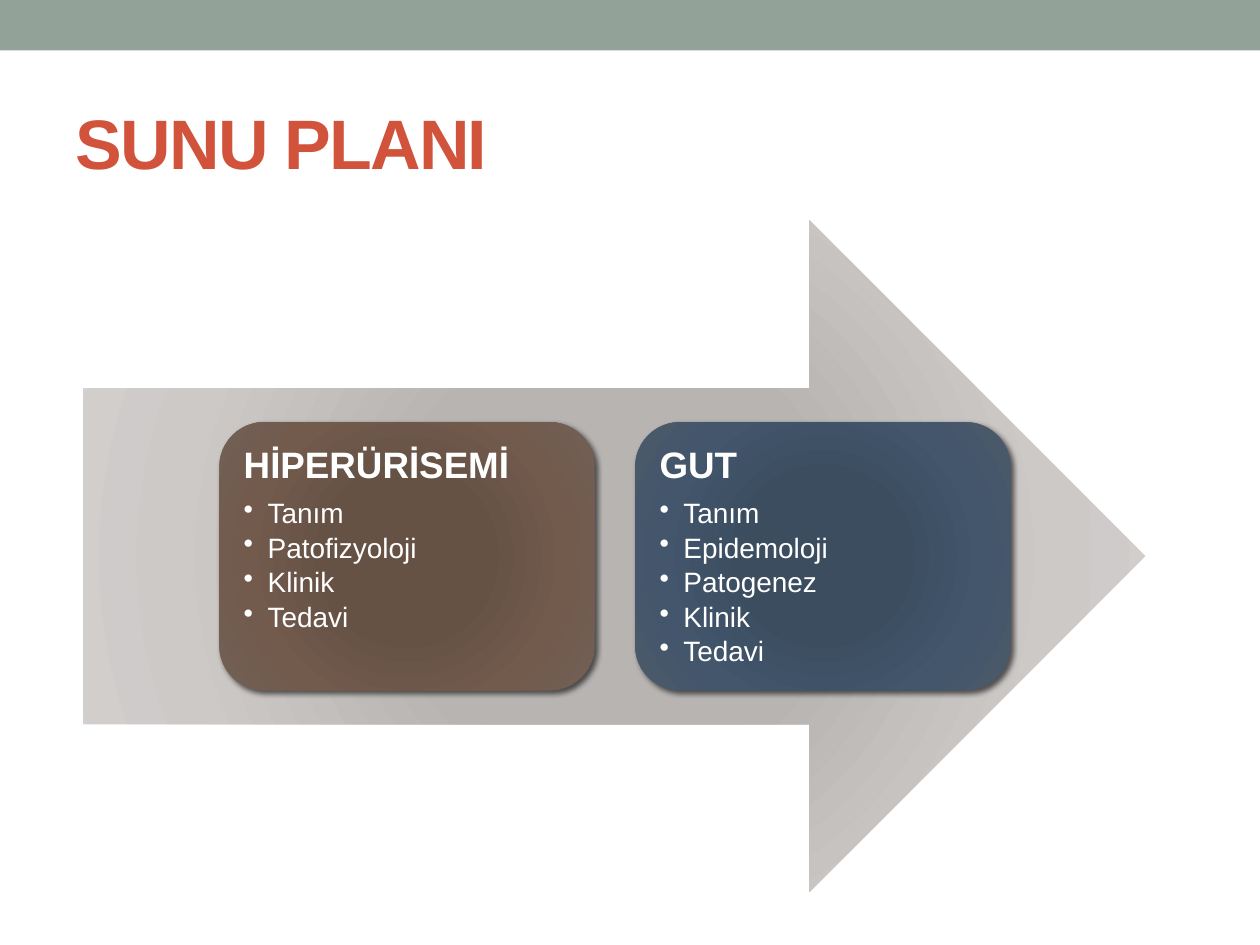
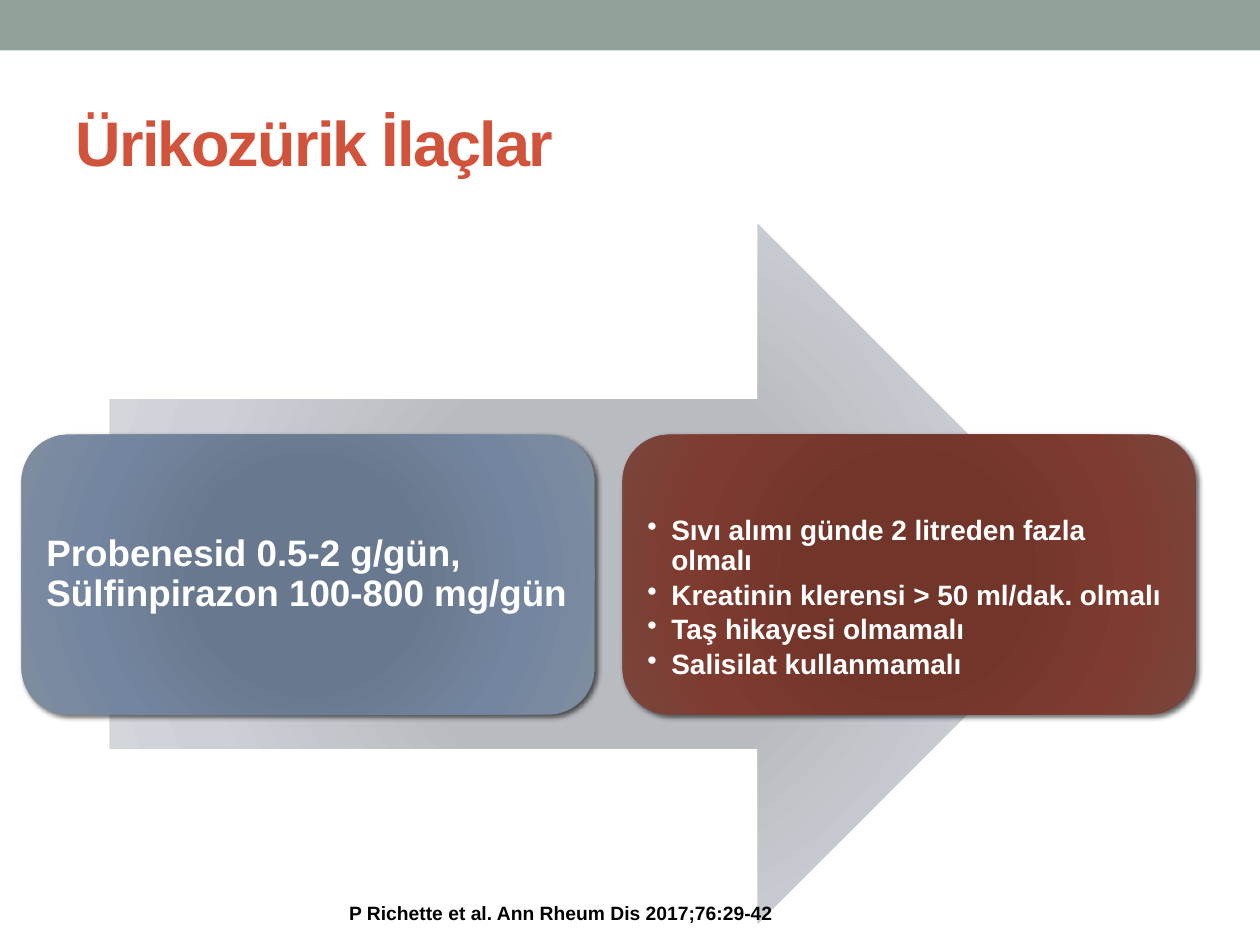
from dataclasses import dataclass

from pptx import Presentation
from pptx.dml.color import RGBColor
from pptx.enum.shapes import MSO_SHAPE as Preset
from pptx.enum.text import MSO_ANCHOR as Anchor, PP_ALIGN as Align
from pptx.oxml import parse_xml
from pptx.oxml.ns import nsdecls, qn
from pptx.shapes.autoshape import Shape
from pptx.slide import Slide
from pptx.util import Inches, Pt

FONT = "Arial"
BAND, TITLE, WHITE, BLACK = "93A299", "D2533C", "FFFFFF", "000000"
GRADIENT_STOPS = (0, 34, 70, 100)
TEXT_INSET = 0.09
BULLET_INDENT = Inches(0.19)


@dataclass(frozen=True)
class Frame:
    left: float
    top: float
    width: float
    height: float

    def lengths(self) -> tuple[int, ...]:
        return tuple(Inches(v) for v in (self.left, self.top, self.width, self.height))


@dataclass(frozen=True)
class Card:
    shades: tuple[str, ...]
    heading: str = ""
    bullets: tuple[str, ...] = ()
    bold_bullets: bool = False
    anchor: Anchor = Anchor.TOP
    top_inset: float = TEXT_INSET


@dataclass(frozen=True)
class ArrowPage:
    title: str
    title_size: int
    arrow: Frame
    arrow_shades: tuple[str, ...]
    first_card: Frame
    card_gap: float
    cards: tuple[Card, ...]
    citation: str = ""


PAGES = (
    ArrowPage(
        "SUNU PLANI", 40,
        Frame(0.66, 1.75, 8.43, 5.33), ("B8B4B2", "B7B4B2", "CDC9C7", "D5D2D1"),
        Frame(1.74, 3.35, 2.98, 2.13), 0.32,
        (
            Card(("685044", "665145", "725A4D", "726056"), "HİPERÜRİSEMİ",
                 ("Tanım", "Patofizyoloji", "Klinik", "Tedavi")),
            Card(("3B4D61", "3C4D60", "43566B", "4C5A6A"), "GUT",
                 ("Tanım", "Epidemoloji", "Patogenez", "Klinik", "Tedavi")),
        ),
    ),
    ArrowPage(
        "Ürikozürik İlaçlar", 36,
        Frame(0.87, 1.78, 7.92, 5.55), ("B7BBC1", "B8BBC0", "CDD1D7", "D8DBDF"),
        Frame(0.17, 3.45, 4.55, 2.22), 0.22,
        (
            Card(("677790", "68788E", "74869F", "808DA0"),
                 "Probenesid 0.5-2 g/gün, Sülfinpirazon 100-800 mg/gün",
                 anchor=Anchor.MIDDLE),
            Card(("743327", "72352A", "7F3B2F", "79463D"),
                 bullets=("Sıvı alımı günde 2 litreden fazla olmalı",
                          "Kreatinin klerensi > 50 ml/dak. olmalı",
                          "Taş hikayesi olmamalı",
                          "Salisilat kullanmamalı"),
                 bold_bullets=True, top_inset=0.54),
        ),
        "P Richette et al. Ann Rheum Dis 2017;76:29-42",
    ),
)


def rgb(color: str) -> RGBColor:
    return RGBColor.from_string(color)


def style(para, size: float, color: str, bold: bool = True) -> None:
    font = para.font
    font.name, font.size, font.bold = FONT, Pt(size), bold
    font.color.rgb = rgb(color)


def add_plain_shape(page: Slide, preset: Preset, frame: Frame) -> Shape:
    """Add a shape without outline or shadow."""
    shape = page.shapes.add_shape(preset, *frame.lengths())
    shape.line.fill.background()
    shape.shadow.inherit = False
    return shape


def fill_radial(shape: Shape, shades: tuple[str, ...]) -> None:
    stops = "".join(
        f'<a:gs pos="{stop * 1000}"><a:srgbClr val="{shade}"/></a:gs>'
        for stop, shade in zip(GRADIENT_STOPS, shades)
    )
    gradient = parse_xml(
        f'<a:gradFill {nsdecls("a")} rotWithShape="1"><a:gsLst>{stops}</a:gsLst>'
        '<a:path path="circle"><a:fillToRect l="100000" t="100000" '
        'r="100000" b="100000"/></a:path></a:gradFill>'
    )
    shape._element.spPr.find(qn("a:prstGeom")).addnext(gradient)


def add_shadow(shape: Shape) -> None:
    effects = shape._element.spPr.find(qn("a:effectLst"))
    effects.append(parse_xml(
        f'<a:outerShdw {nsdecls("a")} blurRad="{Pt(3)}" dist="{Pt(2)}" dir="2700000" '
        f'rotWithShape="0"><a:srgbClr val="{BLACK}"><a:alpha val="60000"/>'
        '</a:srgbClr></a:outerShdw>'
    ))


def add_bullet(para) -> None:
    properties = para._p.get_or_add_pPr()
    properties.set("marL", str(BULLET_INDENT))
    properties.set("indent", str(-BULLET_INDENT))
    properties.append(parse_xml(f'<a:buChar {nsdecls("a")} char="•"/>'))


def add_card(page: Slide, card: Card, frame: Frame) -> None:
    box = add_plain_shape(page, Preset.ROUNDED_RECTANGLE, frame)
    fill_radial(box, card.shades)
    add_shadow(box)
    text = box.text_frame
    text.word_wrap = True
    text.vertical_anchor = card.anchor
    text.margin_left = text.margin_right = text.margin_bottom = Inches(TEXT_INSET)
    text.margin_top = Inches(card.top_inset)

    headings = (card.heading,) if card.heading else ()
    lines = headings + card.bullets
    text.text = "\n".join(lines)
    for index, para in enumerate(text.paragraphs):
        is_heading = index < len(headings)
        para.alignment = Align.LEFT
        para.line_spacing = 0.9
        para.space_after = Pt(7.5 if is_heading else 2.5)
        if is_heading:
            style(para, 21, WHITE)
        else:
            add_bullet(para)
            style(para, 16, WHITE, card.bold_bullets)


def add_band(page: Slide) -> None:
    band = add_plain_shape(page, Preset.RECTANGLE, Frame(0, 0, 10, 0.4))
    band.fill.solid()
    band.fill.fore_color.rgb = rgb(BAND)


def set_title(page: Slide, words: str, size: int) -> None:
    title = page.shapes.title
    title.left, title.top, title.width, title.height = Frame(0.5, 0.58, 9, 1.08).lengths()
    title.text_frame.text = words
    title.text_frame.vertical_anchor = Anchor.MIDDLE
    para = title.text_frame.paragraphs[0]
    para.alignment = Align.LEFT
    style(para, size, TITLE)
    para.runs[0]._r.get_or_add_rPr().set("spc", "-100")


def add_citation(page: Slide, words: str) -> None:
    box = page.shapes.add_textbox(*Frame(2.77, 7.15, 4.29, 0.25).lengths())
    text = box.text_frame
    text.word_wrap = True
    text.margin_left = text.margin_top = text.margin_right = text.margin_bottom = 0
    text.text = words
    style(text.paragraphs[0], 11, BLACK)


def add_arrow_page(deck, content: ArrowPage) -> None:
    page = deck.slides.add_slide(deck.slide_layouts[5])
    add_band(page)
    set_title(page, content.title, content.title_size)
    arrow = add_plain_shape(page, Preset.RIGHT_ARROW, content.arrow)
    fill_radial(arrow, content.arrow_shades)
    first = content.first_card
    for column, card in enumerate(content.cards):
        left = first.left + column * (first.width + content.card_gap)
        add_card(page, card, Frame(left, first.top, first.width, first.height))
    if content.citation:
        add_citation(page, content.citation)


def main() -> None:
    deck = Presentation()
    deck.slide_width, deck.slide_height = Inches(10), Inches(7.5)
    for content in PAGES:
        add_arrow_page(deck, content)
    deck.save("out.pptx")


if __name__ == "__main__":
    main()
